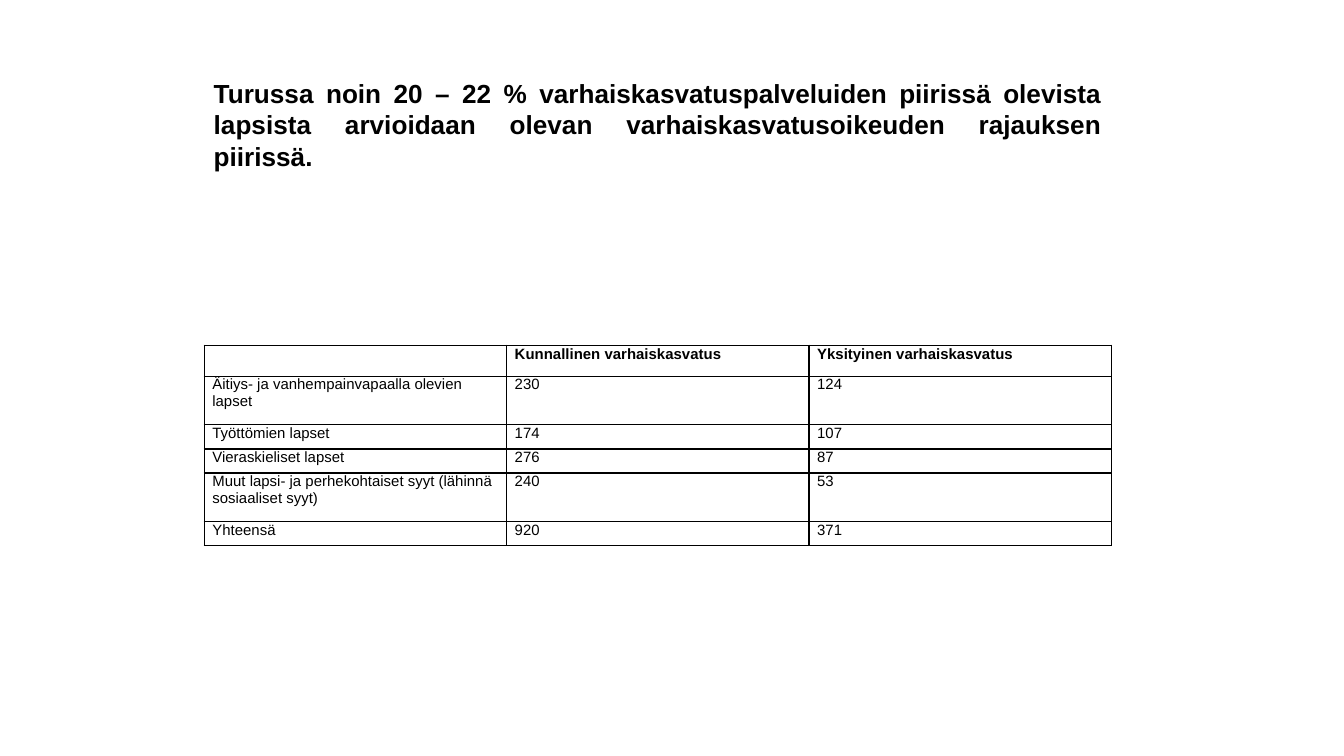
from lxml.etree import SubElement
from pptx import Presentation
from pptx.dml.color import RGBColor
from pptx.enum.text import MSO_ANCHOR, PP_ALIGN
from pptx.oxml.ns import qn
from pptx.util import Inches, Pt

BLACK = "000000"
LEFT, COLUMN_WIDTH = 1.52, 2.25
ROW_HEIGHTS = [0.23, 0.36, 0.18, 0.18, 0.36, 0.18]
ROWS = [
    ("", "Kunnallinen varhaiskasvatus", "Yksityinen varhaiskasvatus"),
    ("Äitiys- ja vanhempainvapaalla olevien lapset", "230", "124"),
    ("Työttömien lapset", "174", "107"),
    ("Vieraskieliset lapset", "276", "87"),
    ("Muut lapsi- ja perhekohtaiset syyt (lähinnä sosiaaliset syyt)", "240", "53"),
    ("Yhteensä", "920", "371"),
]


def format_runs(paragraph, size, bold):
    for run in paragraph.runs:
        run.font.name = "Arial"
        run.font.size = Pt(size)
        run.font.bold = bold
        run.font.color.rgb = RGBColor.from_string(BLACK)


def add_borders(cell, color, width):
    properties = cell._tc.get_or_add_tcPr()
    for position, side in enumerate(("a:lnL", "a:lnR", "a:lnT", "a:lnB")):
        line = SubElement(properties, qn(side), w=str(Pt(width)))
        fill = SubElement(line, qn("a:solidFill"))
        SubElement(fill, qn("a:srgbClr"), val=color)
        properties.insert(position, line)  # borders come before the fill


# Widescreen slide, 16:9
presentation = Presentation()
presentation.slide_width = Inches(10)
presentation.slide_height = Inches(10 * 9 / 16)
slide = presentation.slides.add_slide(presentation.slide_layouts[6])

# Table of children by reason and provider
table = slide.shapes.add_table(
    len(ROWS), 3, Inches(LEFT), Inches(2.57),
    Inches(3 * COLUMN_WIDTH), Inches(sum(ROW_HEIGHTS))).table
for column in table.columns:
    column.width = Inches(COLUMN_WIDTH)
for row_index, (values, height) in enumerate(zip(ROWS, ROW_HEIGHTS)):
    table.rows[row_index].height = Inches(height)
    for column_index, value in enumerate(values):
        cell = table.cell(row_index, column_index)
        cell.margin_left = cell.margin_right = Inches(0.06)
        cell.margin_top = cell.margin_bottom = 0
        cell.fill.background()
        add_borders(cell, BLACK, 1)
        paragraph = cell.text_frame.paragraphs[0]
        if value:
            paragraph.text = value
            format_runs(paragraph, 8, row_index == 0)
        else:  # keeps the empty cell from stretching its row
            SubElement(paragraph._p, qn("a:endParaRPr"), sz="800")

# Headline, raised by a deeper bottom margin
headline = slide.shapes.add_textbox(
    Inches(LEFT), Inches(0.65), Inches(3 * COLUMN_WIDTH), Inches(0.91))
text_frame = headline.text_frame
text_frame.word_wrap = True
text_frame.vertical_anchor = MSO_ANCHOR.MIDDLE
text_frame.margin_left = text_frame.margin_right = Inches(0.07)
text_frame.margin_top = Inches(0.04)
text_frame.margin_bottom = Inches(0.4)
text_frame.text = (
    "Turussa noin 20 – 22 % varhaiskasvatuspalveluiden piirissä olevista "
    "lapsista arvioidaan olevan varhaiskasvatusoikeuden rajauksen piirissä.")
text_frame.paragraphs[0].alignment = PP_ALIGN.JUSTIFY
format_runs(text_frame.paragraphs[0], 14, True)

presentation.save("out.pptx")
